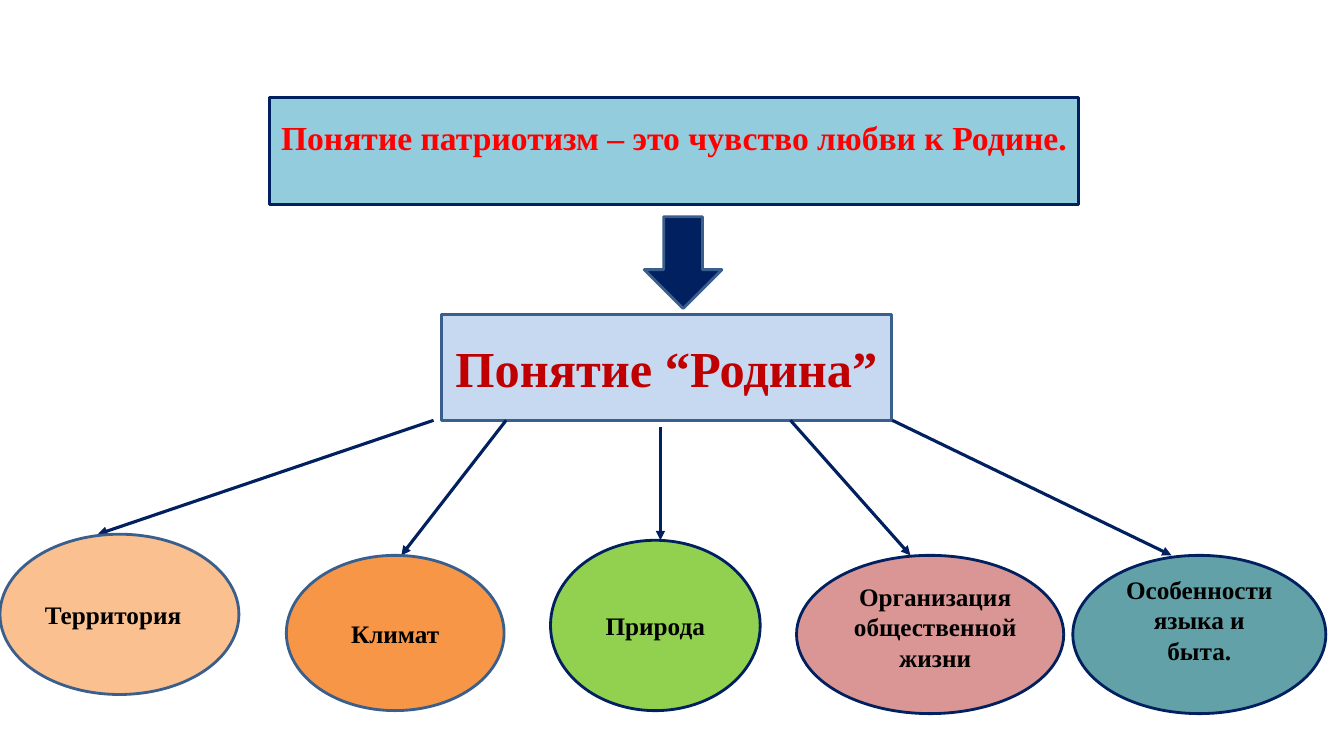
from collections import namedtuple

import pptx
import pptx.dml.color
import pptx.enum.shapes
import pptx.enum.text
import pptx.oxml.ns
import pptx.util
from lxml import etree

Inches, Pt = pptx.util.Inches, pptx.util.Pt
SHAPE = pptx.enum.shapes.MSO_SHAPE
ALIGN = pptx.enum.text.PP_ALIGN
MIDDLE = pptx.enum.text.MSO_ANCHOR.MIDDLE
TOP = pptx.enum.text.MSO_ANCHOR.TOP

Box = namedtuple("Box", "left top width height")
Feature = namedtuple("Feature", "text box fill edge arrow_start arrow_end")


class Theme:
    font = "Times New Roman"
    navy, steel, black = "002060", "3A5F8C", "000000"
    definition_fill, definition_text = "93CDDD", "FF0000"
    homeland_fill, homeland_text = "C6D9F1", "C00000"
    peach, orange, green = "FAC090", "F79646", "92D050"
    rose, teal = "D99694", "63A1A9"
    definition_size, homeland_size, feature_size = 24, 36, 18
    edge_width, arrow_width = 2, 2.25


# Shared helpers
def rgb(value):
    return pptx.dml.color.RGBColor.from_string(value)


def apply(target, values):
    for name, value in values.items():
        setattr(target, name, value)


def inches(box):
    return [Inches(value) for value in box]


def paint(shape, fill, edge):
    shape.fill.solid()
    shape.fill.fore_color.rgb = rgb(fill)
    shape.line.color.rgb = rgb(edge)
    shape.line.width = Pt(Theme.edge_width)


def add_outline(slide, kind, box, fill, edge):
    outline = slide.shapes.add_shape(kind, *inches(box))
    outline.shadow.inherit = False
    paint(outline, fill, edge)
    return outline


def write(shape, text, size, color, align=ALIGN.CENTER, anchor=MIDDLE,
          bottom=0.05, side=0.1):
    frame = shape.text_frame
    apply(frame, {
        "text": text, "word_wrap": True, "vertical_anchor": anchor,
        "auto_size": pptx.enum.text.MSO_AUTO_SIZE.NONE,
        "margin_left": Inches(side), "margin_right": Inches(side),
        "margin_top": Inches(0.05), "margin_bottom": Inches(bottom),
    })
    paragraph = frame.paragraphs[0]
    paragraph.alignment = align
    font = paragraph.runs[0].font
    apply(font, {"name": Theme.font, "size": Pt(size), "bold": True})
    font.color.rgb = rgb(color)


def add_arrow(slide, start, end):
    arrow = slide.shapes.add_connector(
        pptx.enum.shapes.MSO_CONNECTOR.STRAIGHT, *inches(start + end))
    arrow.line.color.rgb = rgb(Theme.navy)
    arrow.line.width = Pt(Theme.arrow_width)
    qn = pptx.oxml.ns.qn
    etree.SubElement(arrow.line._get_or_add_ln(), qn("a:tailEnd"), type="triangle")
    etree.SubElement(arrow._element.spPr, qn("a:effectLst"))


# Definition of patriotism, with the block arrow below it
def add_definition(slide, box):
    title = slide.shapes.title
    apply(title, dict(zip(Box._fields, inches(box))))
    paint(title, Theme.definition_fill, Theme.navy)
    write(title, "Понятие патриотизм – это чувство любви к Родине.",
          Theme.definition_size, Theme.definition_text, bottom=0.34, side=0.05)
    block_arrow = Box(box.left + 3.72, box.top + 1.18, 0.77, 0.91)
    add_outline(slide, SHAPE.DOWN_ARROW, block_arrow, Theme.navy, Theme.steel)


# Central concept
def add_homeland(slide, box):
    homeland = add_outline(slide, SHAPE.RECTANGLE, box,
                           Theme.homeland_fill, Theme.steel)
    write(homeland, "Понятие “Родина”", Theme.homeland_size,
          Theme.homeland_text, side=0.05)


# Five features; their positions are offsets within the region
FEATURES = [
    Feature("Территория", Box(0, 1.13, 2.37, 1.59), Theme.peach,
            Theme.steel, (4.3, 0), (0.97, 1.13)),
    Feature("Климат", Box(2.84, 1.34, 2.16, 1.54), Theme.orange,
            Theme.steel, (5.02, 0), (3.98, 1.34)),
    Feature("Природа", Box(5.46, 1.19, 2.08, 1.69), Theme.green,
            Theme.navy, (6.55, 0.07), (6.55, 1.19)),
    Feature("Организация общественной жизни", Box(7.9, 1.34, 2.65, 1.57),
            Theme.rose, Theme.navy, (7.84, 0), (9.03, 1.34)),
    Feature("Особенности языка и быта.", Box(10.64, 1.34, 2.51, 1.57),
            Theme.teal, Theme.navy, (8.85, 0), (11.62, 1.34)),
]
TEXT_FORMATS = {
    "Территория": {"align": ALIGN.LEFT},
    "Организация общественной жизни": {"anchor": TOP},
    "Особенности языка и быта.": {"bottom": 0.34},
}


def add_features(slide, region):
    def placed(point):
        return region.left + point[0], region.top + point[1]

    for feature in FEATURES:
        add_arrow(slide, placed(feature.arrow_start), placed(feature.arrow_end))
        oval = Box(*placed(feature.box), *feature.box[2:])
        holder = add_outline(slide, SHAPE.OVAL, oval, feature.fill, feature.edge)
        text_format = TEXT_FORMATS.get(feature.text, {})
        if text_format.get("anchor") == TOP:
            # The longest label needs more width than the oval's text area
            label = Box(oval.left + 0.1, oval.top + 0.21, oval.width - 0.1, 1.01)
            holder = slide.shapes.add_textbox(*inches(label))
        write(holder, feature.text, Theme.feature_size, Theme.black, **text_format)


def main():
    deck = pptx.Presentation()
    deck.slide_width, deck.slide_height = Inches(13.33), Inches(7.5)
    slide = deck.slides.add_slide(deck.slide_layouts.get_by_name("Title Only"))
    add_definition(slide, Box(2.67, 0.97, 8.03, 1.06))
    add_homeland(slide, Box(4.38, 3.12, 4.46, 1.05))
    add_features(slide, Box(0, 4.17, 13.33, 2.91))
    deck.save("out.pptx")


if __name__ == "__main__":
    main()
